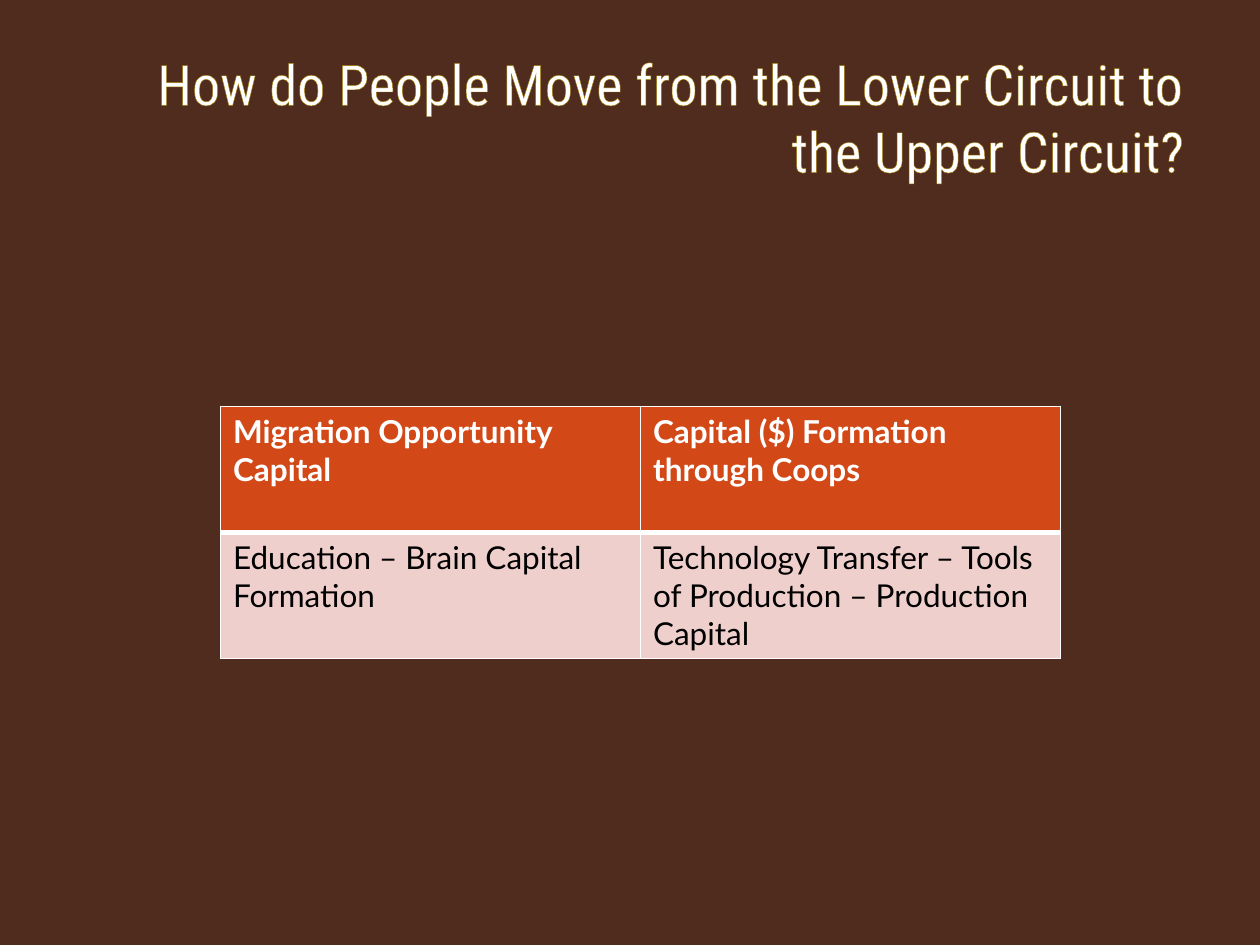
"""Build a slide with a title and a two-column table on moving between circuits."""
import pptx
import pptx.dml.color
import pptx.enum.text
import pptx.oxml
import pptx.oxml.ns
import pptx.util

COLORS = {"bg": "502C1E", "white": "FFFFFF", "black": "000000",
          "outline": "A37A00", "header": "D34817", "body": "EFCFCC"}
FORMATS = {
    "title": {"name": "Roboto Condensed", "size": pptx.util.Pt(32), "bold": False},
    "header": {"name": "Lato", "size": pptx.util.Pt(18), "bold": True},
    "body": {"name": "Lato", "size": pptx.util.Pt(18), "bold": False},
}
ROWS = [
    ("header", "white", 3, ["Migration Opportunity Capital",
                            "Capital ($) Formation through Coops"]),
    ("body", "black", 1, ["Education – Brain Capital Formation",
                          "Technology Transfer – Tools of Production – Production Capital"]),
]


def add_text(p, text, style, color):
    r = p.add_run()
    r.text = text
    for key, value in FORMATS[style].items():
        setattr(r.font, key, value)
    r.font.color.rgb = pptx.dml.color.RGBColor.from_string(COLORS[color])
    return r


def line_xml(tag, points, color):
    return pptx.oxml.parse_xml(
        f'<a:{tag} {pptx.oxml.ns.nsdecls("a")} w="{pptx.util.Pt(points)}">'
        f'<a:solidFill><a:srgbClr val="{COLORS[color]}"/></a:solidFill></a:{tag}>')


prs = pptx.Presentation()
prs.slide_width, prs.slide_height = pptx.util.Inches(10), pptx.util.Inches(7.5)
W, H = prs.slide_width, prs.slide_height
s = prs.slides.add_slide(prs.slide_layouts[6])
s.background.fill.solid()
s.background.fill.fore_color.rgb = pptx.dml.color.RGBColor.from_string(COLORS["bg"])

sp = s.shapes.add_textbox(int(W * 0.05), int(H * 0.04), int(W * 0.9), int(H / 6))
tf = sp.text_frame
tf.word_wrap = True
tf.vertical_anchor = pptx.enum.text.MSO_ANCHOR.MIDDLE
p = tf.paragraphs[0]
p.alignment = pptx.enum.text.PP_ALIGN.RIGHT
r = add_text(p, "How do People Move from the Lower Circuit to the Upper Circuit?",
             "title", "white")
r.font._element.insert(0, line_xml("ln", 0.75, "outline"))

col_w, row_h = int(W / 3), int(H * 2 / 15)
tbl = s.shapes.add_table(2, 2, int(W * 0.175), int(H * 0.43), col_w * 2, row_h * 2).table
for i, (style, color, bottom, texts) in enumerate(ROWS):
    tbl.rows[i].height = row_h
    for j, text in enumerate(texts):
        tbl.columns[j].width = col_w
        cell = tbl.cell(i, j)
        add_text(cell.text_frame.paragraphs[0], text, style, color)
        tcPr = cell._tc.get_or_add_tcPr()
        top = ROWS[i - 1][2] if i else 1
        for tag, points in {"lnL": 1, "lnR": 1, "lnT": top, "lnB": bottom}.items():
            tcPr.append(line_xml(tag, points, "white"))
        cell.fill.solid()
        cell.fill.fore_color.rgb = pptx.dml.color.RGBColor.from_string(COLORS[style])

prs.save("out.pptx")
